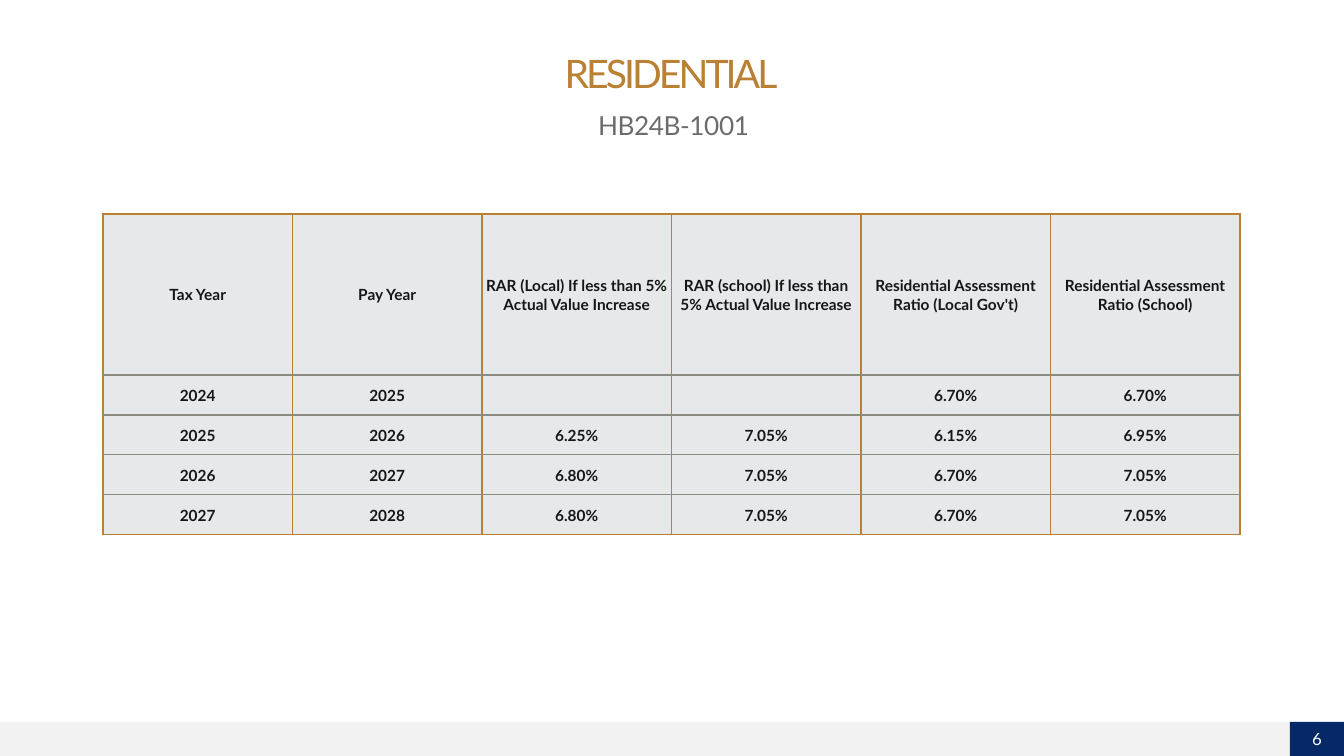
"""Build the residential assessment ratio slide."""
from lxml.etree import SubElement
from pptx import Presentation
from pptx.dml.color import RGBColor
from pptx.enum.shapes import MSO_SHAPE
from pptx.enum.text import MSO_ANCHOR, MSO_AUTO_SIZE, PP_ALIGN
from pptx.oxml.ns import qn
from pptx.util import Emu, Pt

RECT = MSO_SHAPE.RECTANGLE
TOP, MIDDLE = MSO_ANCHOR.TOP, MSO_ANCHOR.MIDDLE
CENTER = PP_ALIGN.CENTER
FIXED = MSO_AUTO_SIZE.NONE

GOLD = RGBColor(0xBA, 0x80, 0x33)
GRAY = RGBColor(0x6C, 0x6C, 0x6C)
RULE = RGBColor(0x8C, 0x8C, 0x84)
INK = RGBColor(0x16, 0x16, 0x16)
CELL = RGBColor(0xE7, 0xE8, 0xEA)
PALE = RGBColor(0xF2, 0xF2, 0xF2)
NAVY = RGBColor(0x05, 0x28, 0x66)
WHITE = RGBColor(0xFF, 0xFF, 0xFF)

HEADS = [
    ("RESIDENTIAL", (81, 51, 1180, 107), 28, GOLD, -210, 0.85),
    ("HB24B-1001", (83, 108, 1181, 49), 18.7, GRAY, -30, 0.89),
]
BARS = [
    ("", (0, 722, 1344, 34), PALE),
    ("6", (1290, 722, 54, 34), NAVY),
]
ROWS = [
    ("Tax Year", "Pay Year",
     "RAR (Local) If less than 5% Actual Value Increase",
     "RAR (school) If less than 5% Actual Value Increase",
     "Residential Assessment Ratio (Local Gov't)",
     "Residential Assessment Ratio (School)"),
    ("2024", "2025", "", "", "6.70%", "6.70%"),
    ("2025", "2026", "6.25%", "7.05%", "6.15%", "6.95%"),
    ("2026", "2027", "6.80%", "7.05%", "6.70%", "7.05%"),
    ("2027", "2028", "6.80%", "7.05%", "6.70%", "7.05%"),
]
LEFT, HIGH, WIDE = 103, 214, 1137
HEAD_H, ROW_H = 161, 40


def px(num):
    return Emu(round(num * 914400 / 100.8))


def put(item, vals):
    for key, val in vals.items():
        setattr(item, key, val)


def write(frame, text, size, color, bold=False, space=0, lead=1.0):
    para = frame.paragraphs[0]
    put(para, {"alignment": CENTER, "line_spacing": lead,
               "space_before": Pt(0)})
    run = para.add_run()
    put(run, {"text": text})
    put(run.font, {"name": "Lato", "size": Pt(size), "bold": bold})
    run.font.color.rgb = color
    if space:
        run._r.get_or_add_rPr().set("spc", str(space))


def edge(cell, side, color):
    line = SubElement(cell._tc.get_or_add_tcPr(), qn("a:" + side),
                      w=str(Pt(1)))
    fill = SubElement(line, qn("a:solidFill"))
    SubElement(fill, qn("a:srgbClr"), val=str(color))


def add_bars(slide):
    for text, box, color in BARS:
        bar = slide.shapes.add_shape(RECT, *map(px, box))
        bar.shadow.inherit = False
        bar.fill.solid()
        bar.fill.fore_color.rgb = color
        bar.line.fill.background()
        if text:
            put(bar.text_frame, {"vertical_anchor": MIDDLE,
                                 "word_wrap": False})
            write(bar.text_frame, text, 12, WHITE)


def add_heads(slide):
    for head, spot in zip(HEADS, slide.placeholders):
        text, box, size, color, space, lead = head
        put(spot, dict(zip(("left", "top", "width", "height"),
                           map(px, box))))
        put(spot.text_frame, {"vertical_anchor": TOP, "word_wrap": True,
                              "auto_size": FIXED})
        write(spot.text_frame, text, size, color, space=space, lead=lead)


def add_grid(slide):
    count, last = len(ROWS[0]), len(ROWS) - 1
    high = HEAD_H + ROW_H * last
    table = slide.shapes.add_table(
        len(ROWS), count, *map(px, (LEFT, HIGH, WIDE, high))).table
    put(table, {"first_row": False, "horz_banding": False})
    for col in table.columns:
        col.width = px(WIDE / count)
    for r, row in enumerate(ROWS):
        table.rows[r].height = px(ROW_H if r else HEAD_H)
        for c, text in enumerate(row):
            cell = table.cell(r, c)
            put(cell, {"vertical_anchor": MIDDLE, "margin_left": px(1),
                       "margin_right": px(1), "margin_top": px(1),
                       "margin_bottom": 0})
            edge(cell, "lnL", GOLD)
            edge(cell, "lnR", GOLD)
            edge(cell, "lnT", RULE if r else GOLD)
            edge(cell, "lnB", RULE if r < last else GOLD)
            cell.fill.solid()
            cell.fill.fore_color.rgb = CELL
            if text:
                write(cell.text_frame, text, 11, INK, bold=True)


def main():
    deck = Presentation()
    put(deck, {"slide_width": px(1344), "slide_height": px(756)})
    slide = deck.slides.add_slide(deck.slide_layouts[2])
    add_bars(slide)
    add_heads(slide)
    add_grid(slide)
    deck.save("out.pptx")


if __name__ == "__main__":
    main()
